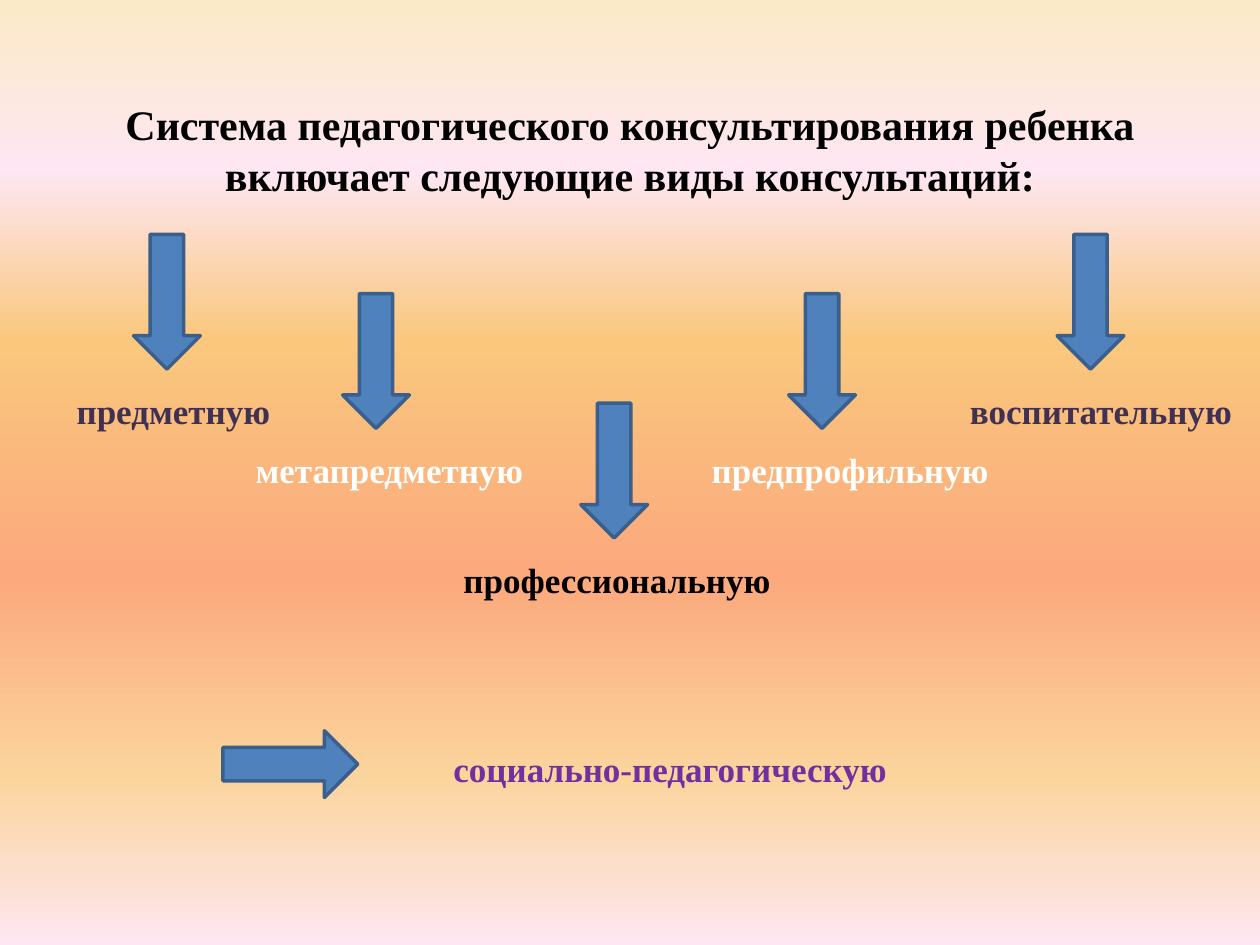
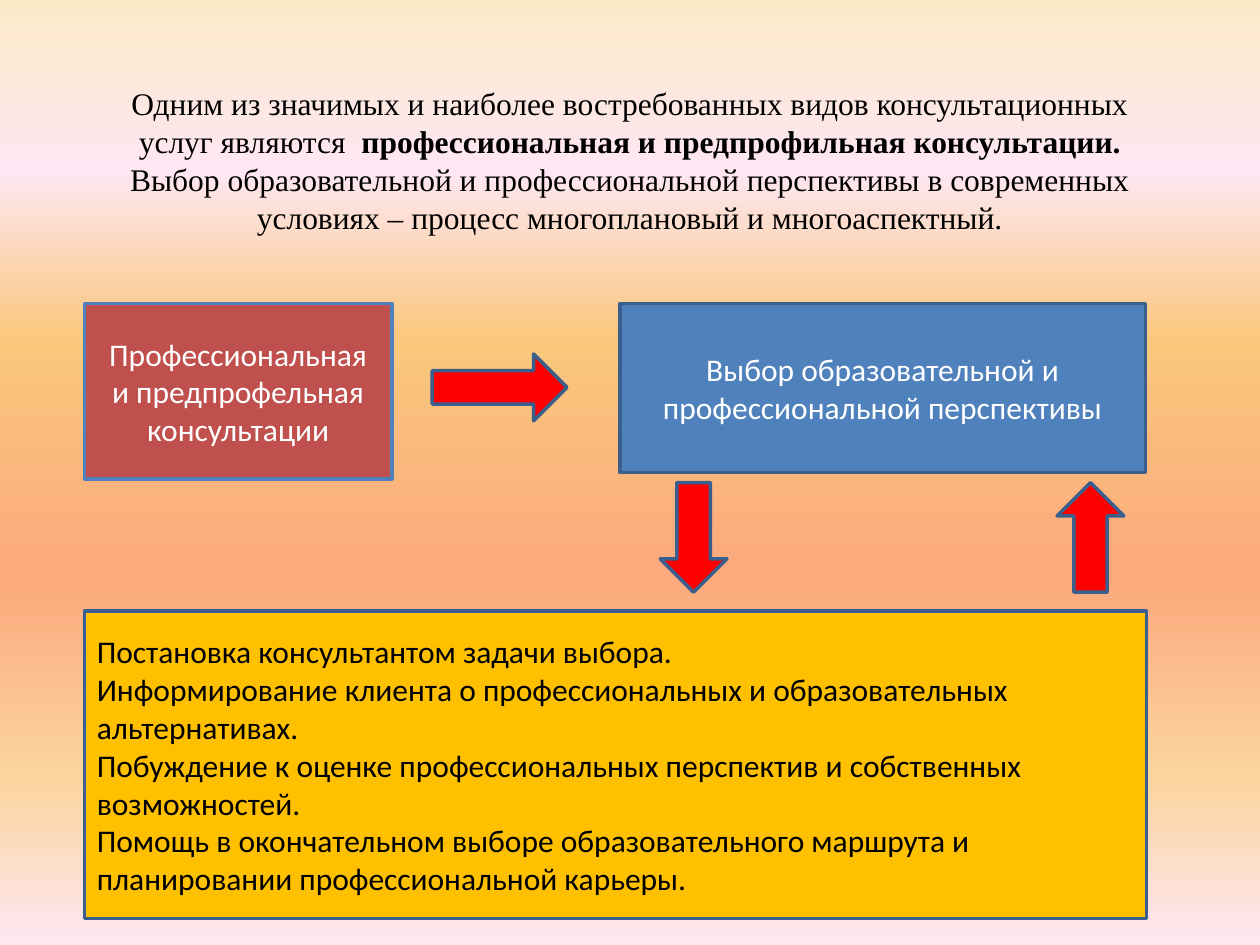
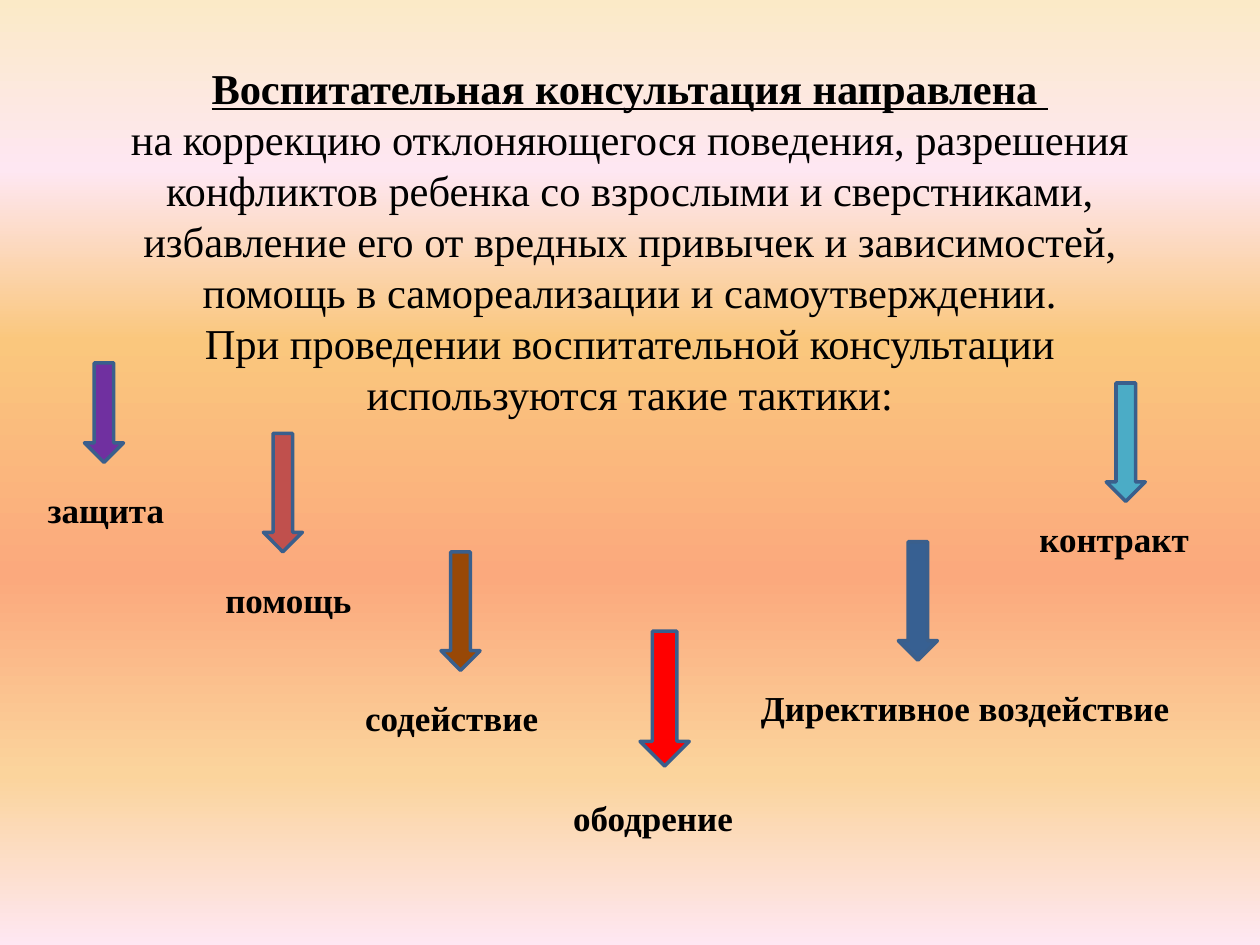
import copy

import pptx
import pptx.dml.color
import pptx.enum.shapes
import pptx.enum.text
import pptx.oxml
import pptx.oxml.ns
import pptx.util

Inches = pptx.util.Inches
MSO = pptx.enum.shapes.MSO_SHAPE
ALIGN = pptx.enum.text.PP_ALIGN
ANCHOR = pptx.enum.text.MSO_ANCHOR

COLORS = {
    "black": "000000", "white": "FFFFFF", "plum": "403152", "purple": "7030A0",
    "blue": "4F81BD", "outline": "3A5F8C", "navy": "376092", "teal": "4BACC6",
    "brick": "C0504D", "brown": "984807", "red": "FF0000", "amber": "FFC000",
}
BACKGROUND = [(0, "FBEAC7"), (18, "FEE7F2"), (36, "FAC77D"),
              (61, "FBA97D"), (82, "FBD49C"), (100, "FEE7F2")]


def write(p, text, size=20, color="black", font="Times New Roman",
          bold=False, underline=False, align=None):
    """Add text to paragraph p; each newline becomes a line break of the same format."""
    if align is not None:
        p.alignment = align
    for i, line in enumerate(text.split("\n")):
        if i:
            p._p.add_br().append(copy.deepcopy(r._r.rPr))
        if not line:
            continue
        r = p.add_run()
        r.text = line
        r.font.size = pptx.util.Pt(size)
        r.font.name = font
        r.font.bold = bold
        r.font.underline = underline
        r.font.color.rgb = pptx.dml.color.RGBColor.from_string(COLORS[color])


def add_block(s, kind, left, top, width, height, fill="blue", line="outline"):
    sp = s.shapes.add_shape(kind, Inches(left), Inches(top), Inches(width), Inches(height))
    sp.shadow.inherit = False
    sp.fill.solid()
    sp.fill.fore_color.rgb = pptx.dml.color.RGBColor.from_string(COLORS[fill])
    sp.line.color.rgb = pptx.dml.color.RGBColor.from_string(COLORS[line])
    sp.line.width = pptx.util.Pt(2)
    sp.text_frame.vertical_anchor = ANCHOR.MIDDLE
    return sp


prs = pptx.Presentation()
prs.slide_width, prs.slide_height = Inches(10), Inches(7.5)

# Shared gradient background
fill = prs.slide_master.background.fill
fill.gradient()
fill.gradient_angle = 270
stops = prs.slide_master.element.find(".//" + pptx.oxml.ns.qn("a:gsLst"))
for stop in list(stops):
    stops.remove(stop)
for percent, rgb in BACKGROUND:
    stops.append(pptx.oxml.parse_xml(
        f'<a:gs {pptx.oxml.ns.nsdecls("a")} pos="{percent * 1000}">'
        f'<a:srgbClr val="{rgb}"/></a:gs>'))

# Slides and their titles: top, height, anchor, size, runs of (text, format)
titles = [
    (0.36, 1.65, ANCHOR.MIDDLE, 24, [
        ("Система педагогического консультирования ребенка включает "
         "следующие виды консультаций:", {"bold": True})]),
    (0.52, 1.5, ANCHOR.MIDDLE, 18, [
        ("Одним из значимых и наиболее востребованных видов консультационных "
         "услуг являются ", {}),
        (" профессиональная и предпрофильная консультации.\n", {"bold": True}),
        ("Выбор образовательной и профессиональной перспективы в современных "
         "условиях – процесс многоплановый и многоаспектный.", {})]),
    (0.44, 3.46, ANCHOR.TOP, 24.3, [
        ("Воспитательная консультация направлена \n", {"bold": True, "underline": True}),
        ("на коррекцию отклоняющегося поведения, разрешения конфликтов ребенка "
         "со взрослыми и сверстниками, избавление его от вредных привычек и "
         "зависимостей, помощь в самореализации и самоутверждении.\n"
         "При проведении воспитательной консультации используются такие тактики:", {})]),
]
slides = []
for top, height, anchor, size, runs in titles:
    s = prs.slides.add_slide(prs.slide_layouts[0])
    subtitle = s.placeholders[1].element
    subtitle.getparent().remove(subtitle)
    title = s.shapes.title
    title.left, title.top = Inches(0.75), Inches(top)
    title.width, title.height = Inches(8.5), Inches(height)
    tf = title.text_frame
    tf.word_wrap = True
    tf.vertical_anchor = anchor
    for text, style in runs:
        write(tf.paragraphs[0], text, size=size, align=ALIGN.CENTER, **style)
    slides.append(s)
kinds_slide, choice_slide, tactics_slide = slides

# Arrows: slide, shape, left, top, width, height, fill
arrows = [
    (kinds_slide, MSO.RIGHT_ARROW, 1.77, 5.8, 1.07, 0.53, "blue"),
    (choice_slide, MSO.RIGHT_ARROW, 3.43, 2.81, 1.07, 0.53, "red"),
    (choice_slide, MSO.UP_ARROW, 8.39, 3.83, 0.53, 0.87, "red"),
    (choice_slide, MSO.DOWN_ARROW, 5.24, 3.83, 0.53, 0.87, "red"),
    (tactics_slide, MSO.DOWN_ARROW, 0.67, 2.88, 0.31, 0.79, "purple"),
    (tactics_slide, MSO.DOWN_ARROW, 2.09, 3.44, 0.31, 0.94, "brick"),
    (tactics_slide, MSO.DOWN_ARROW, 3.5, 4.38, 0.31, 0.94, "brown"),
    (tactics_slide, MSO.DOWN_ARROW, 8.78, 3.04, 0.31, 0.94, "teal"),
    (tactics_slide, MSO.DOWN_ARROW, 7.13, 4.3, 0.31, 0.94, "navy"),
    (tactics_slide, MSO.DOWN_ARROW, 5.08, 5.01, 0.39, 1.07, "red"),
]

# Labels: slide, text, left, top, width, color
labels = [
    (kinds_slide, "социально-педагогическую", 3.5, 5.88, 3.67, "purple"),
    (tactics_slide, "защита", 0.28, 3.83, 1.34, "black"),
    (tactics_slide, "помощь", 1.69, 4.54, 1.26, "black"),
    (tactics_slide, "содействие", 2.8, 5.48, 1.62, "black"),
    (tactics_slide, "контракт", 8.15, 4.06, 1.5, "black"),
    (tactics_slide, "Директивное воздействие", 5.94, 5.4, 3.62, "black"),
    (tactics_slide, "ободрение", 4.45, 6.27, 1.57, "black"),
]

# Kinds of consultation: each label sits at a fixed distance below its arrow
for text, arrow_left, arrow_top, left, width, color in [
    ("предметную", 1.06, 1.86, 0.51, 1.83, "plum"),
    ("метапредметную", 2.72, 2.33, 1.93, 2.83, "white"),
    ("профессиональную", 4.61, 3.2, 3.58, 2.68, "black"),
    ("предпрофильную", 6.26, 2.33, 5.55, 2.44, "white"),
    ("воспитательную", 8.39, 1.86, 7.6, 2.4, "plum"),
]:
    arrows.append((kinds_slide, MSO.DOWN_ARROW, arrow_left, arrow_top, 0.53, 1.07, "blue"))
    labels.append((kinds_slide, text, left, arrow_top + 1.18, width, color))

for s, kind, left, top, width, height, color in arrows:
    add_block(s, kind, left, top, width, height, fill=color)

for s, text, left, top, width, color in labels:
    tf = s.shapes.add_textbox(Inches(left), Inches(top), Inches(width), Inches(0.44)).text_frame
    tf.word_wrap = True
    tf.auto_size = pptx.enum.text.MSO_AUTO_SIZE.SHAPE_TO_FIT_TEXT
    write(tf.paragraphs[0], text, color=color, bold=True)

# Boxes of the choice diagram
consultations = add_block(choice_slide, MSO.RECTANGLE, 0.67, 2.41, 2.44, 1.39, "brick", "blue")
perspective = add_block(choice_slide, MSO.FLOWCHART_PROCESS, 4.92, 2.41, 4.17, 1.34)
steps = add_block(choice_slide, MSO.RECTANGLE, 0.67, 4.85, 8.43, 2.44, "amber")
for sp, color, align, lines in [
    (consultations, "white", ALIGN.CENTER,
     ["Профессиональная", "и предпрофельная", "консультации"]),
    (perspective, "white", ALIGN.CENTER,
     ["Выбор образовательной и профессиональной перспективы"]),
    (steps, "black", ALIGN.LEFT, [
        "Постановка консультантом задачи выбора.",
        "Информирование клиента о профессиональных и образовательных альтернативах.",
        "Побуждение к оценке профессиональных перспектив и собственных возможностей.",
        "Помощь в окончательном выборе образовательного маршрута и планировании "
        "профессиональной карьеры."]),
]:
    tf = sp.text_frame
    tf.word_wrap = True
    for i, line in enumerate(lines):
        p = tf.add_paragraph() if i else tf.paragraphs[0]
        write(p, line, size=18, color=color, font="Calibri", align=align)

prs.save("out.pptx")
